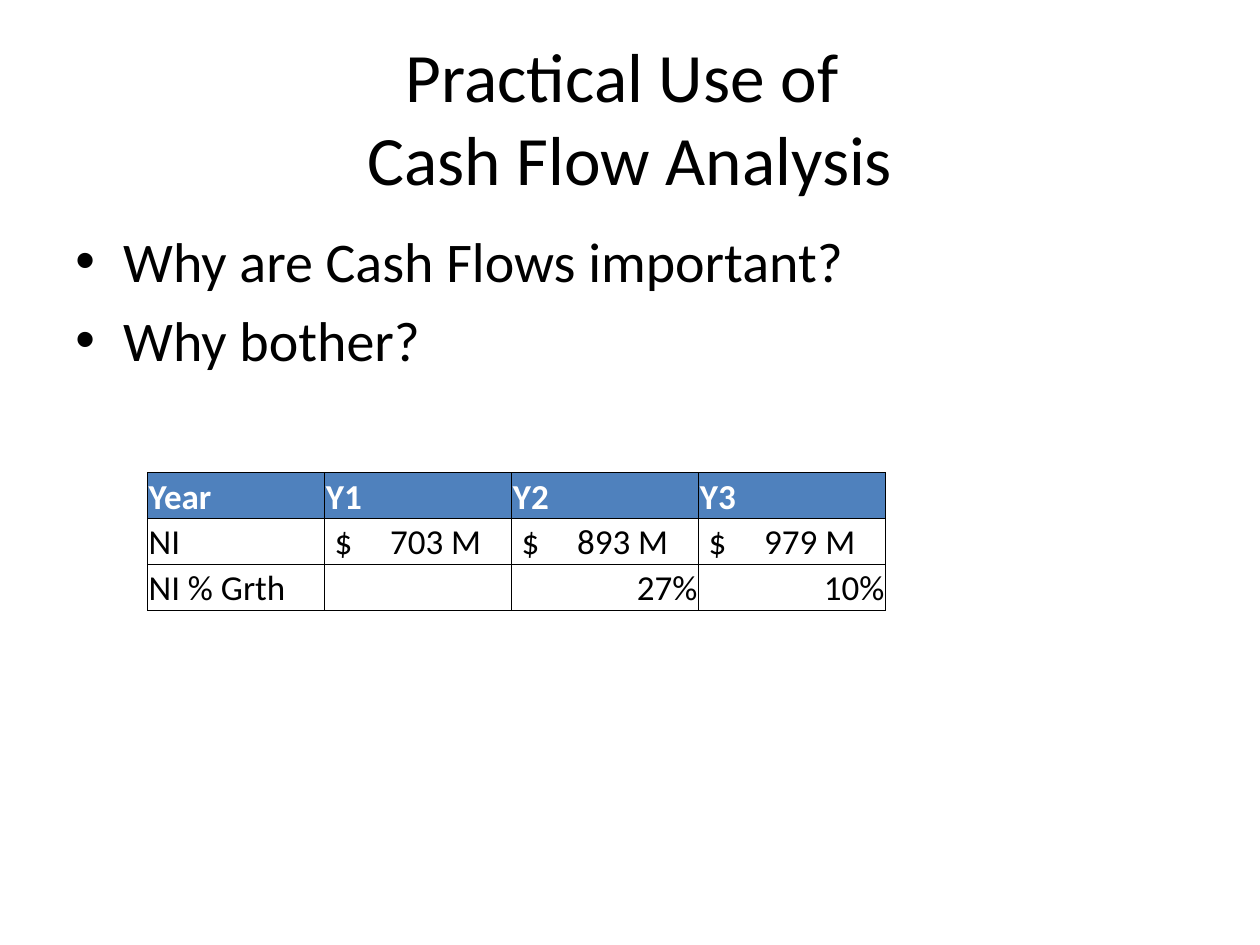
from dataclasses import dataclass

from lxml import etree
from pptx import Presentation
from pptx import util as u
from pptx.dml.color import RGBColor
from pptx.enum import text
from pptx.oxml import ns


@dataclass(frozen=True)
class Theme:
    font: str = "Calibri"
    ink: str = "000000"
    paper: str = "FFFFFF"
    header: str = "4F81BD"
    title_size: float = 39.6
    body_size: float = 32
    table_size: float = 20
    border_width: float = 0.5


@dataclass(frozen=True)
class Box:
    left: int
    top: int
    width: int
    height: int


THEME = Theme()
LEFT = text.PP_ALIGN.LEFT
RIGHT = text.PP_ALIGN.RIGHT
CENTER = text.PP_ALIGN.CENTER
TABLE_ROWS = [
    ["Year", "Y1", "Y2", "Y3"],
    ["NI", "$\t703 M", "$\t893 M", "$\t979 M"],
    ["NI % Grth", "", "27%", "10%"],
]
COLUMN_SHARES = [0.24] + [0.76 / 3] * 3


def share_box(presentation, left, top, width, height):
    across, down = presentation.slide_width, presentation.slide_height
    return Box(int(left * across), int(top * down), int(width * across), int(height * down))


def write(paragraph, words, size, color=THEME.ink, bold=False, align=LEFT, before=0):
    paragraph.text = words
    paragraph.alignment = align
    paragraph.space_before = u.Pt(before)
    for font in [paragraph.font] + [run.font for run in paragraph.runs]:
        font.name = THEME.font
        font.size = u.Pt(size)
        font.bold = bold
        font.color.rgb = RGBColor.from_string(color)


def add_frame(slide, box, anchor):
    shape = slide.shapes.add_textbox(box.left, box.top, box.width, box.height)
    frame = shape.text_frame
    frame.word_wrap = True
    frame.vertical_anchor = anchor
    return frame


def add_bullet(paragraph, indent):
    properties = paragraph._p.get_or_add_pPr()
    properties.set("marL", str(indent))
    properties.set("indent", str(-indent))
    marks = [("a:buFont", "typeface", "Arial"), ("a:buChar", "char", "•")]
    for position, (tag, name, value) in enumerate(marks, start=1):
        mark = etree.Element(ns.qn(tag))
        mark.set(name, value)
        properties.insert(position, mark)


def add_tab_stop(paragraph, position):
    tabs = etree.Element(ns.qn("a:tabLst"))
    etree.SubElement(tabs, ns.qn("a:tab"), pos=str(position), algn="l")
    paragraph._p.get_or_add_pPr().insert(1, tabs)


def add_borders(cell):
    properties = cell._tc.get_or_add_tcPr()
    for position, side in enumerate(("a:lnL", "a:lnR", "a:lnT", "a:lnB")):
        line = etree.Element(ns.qn(side), w=str(u.Pt(THEME.border_width)))
        fill = etree.SubElement(line, ns.qn("a:solidFill"))
        etree.SubElement(fill, ns.qn("a:srgbClr"), val=THEME.ink)
        properties.insert(position, line)


def add_title(slide, box):
    frame = add_frame(slide, box, text.MSO_ANCHOR.MIDDLE)
    write(frame.paragraphs[0], "Practical Use of \vCash Flow Analysis",
          THEME.title_size, align=CENTER)


def add_questions(slide, box):
    frame = add_frame(slide, box, text.MSO_ANCHOR.TOP)
    questions = ["Why are Cash Flows important?", "Why bother?"]
    for index, question in enumerate(questions):
        paragraph = frame.add_paragraph() if index else frame.paragraphs[0]
        write(paragraph, question, THEME.body_size, before=THEME.body_size / 5)
        add_bullet(paragraph, u.Inches(0.38))


def fill_cell(cell, words, is_header):
    has_tab = "\t" in words
    cell.vertical_anchor = text.MSO_ANCHOR.BOTTOM
    cell.margin_left = u.Inches(0.08 if has_tab else 0.01)
    cell.margin_right = cell.margin_top = u.Inches(0.01)
    cell.margin_bottom = 0
    paragraph = cell.text_frame.paragraphs[0]
    write(paragraph, words, THEME.table_size,
          color=THEME.paper if is_header else THEME.ink, bold=is_header,
          align=RIGHT if words.endswith("%") else LEFT)
    if has_tab:
        add_tab_stop(paragraph, u.Inches(0.44))
    if is_header:
        cell.fill.solid()
        cell.fill.fore_color.rgb = RGBColor.from_string(THEME.header)
    else:
        cell.fill.background()
    add_borders(cell)


def add_income_table(slide, box):
    table = slide.shapes.add_table(
        len(TABLE_ROWS), len(COLUMN_SHARES), box.left, box.top, box.width, box.height
    ).table
    table.horz_banding = False
    for column, share in zip(table.columns, COLUMN_SHARES):
        column.width = int(box.width * share)
    for row_index, row in enumerate(TABLE_ROWS):
        for column_index, words in enumerate(row):
            fill_cell(table.cell(row_index, column_index), words, row_index == 0)


def main():
    presentation = Presentation()
    presentation.slide_width = u.Inches(10)
    presentation.slide_height = u.Inches(7.5)
    slide = presentation.slides.add_slide(presentation.slide_layouts[6])
    add_title(slide, share_box(presentation, 0.05, 0.04, 0.9, 1 / 6))
    add_questions(slide, share_box(presentation, 0.05, 0.7 / 3, 0.9, 0.66))
    add_income_table(slide, share_box(presentation, 0.117, 0.5, 0.586, 0.146))
    presentation.save("out.pptx")


if __name__ == "__main__":
    main()
